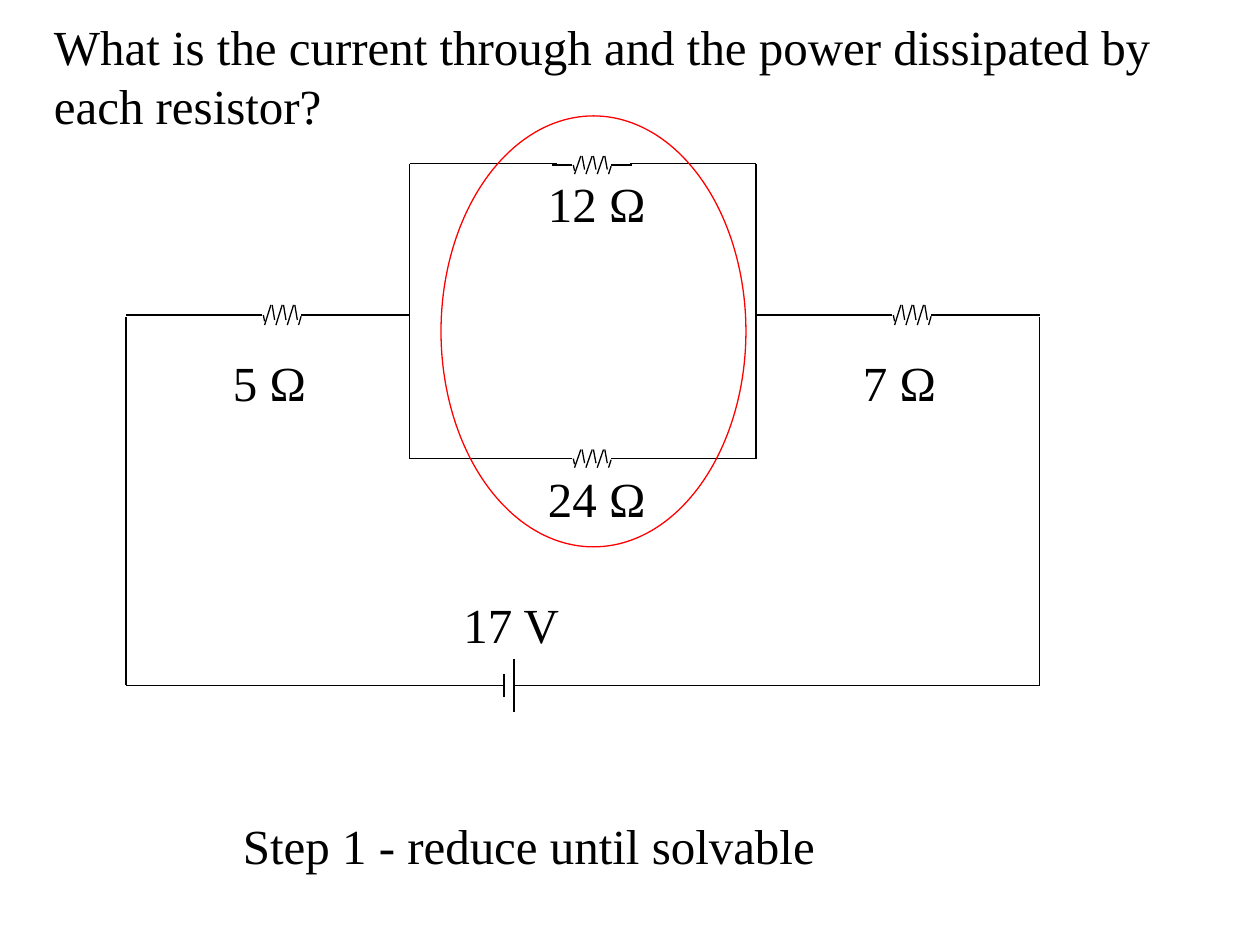
"""Build a slide that shows a resistor circuit with its first solving step."""
from lxml import etree
from pptx import Presentation
from pptx.dml.color import RGBColor
from pptx.enum.shapes import MSO_CONNECTOR, MSO_SHAPE
from pptx.enum.text import MSO_AUTO_SIZE
from pptx.oxml.ns import qn
from pptx.util import Inches, Pt

BLACK = RGBColor(0, 0, 0)
RED = RGBColor(255, 0, 0)
LINE = MSO_CONNECTOR.STRAIGHT
OVAL = MSO_SHAPE.OVAL
FIT = MSO_AUTO_SIZE.SHAPE_TO_FIT_TEXT
CELL = Inches(1)
COLS, ROWS = 10, 7.5
FONT = {"name": "Times New Roman", "size": Pt(28)}

LEFT, SPLIT, JOIN, RIGHT = 1, 3.25, 6, 8.25
TOP, MID, LOW, BASE = 1.3, 2.5, 3.64, 5.44
SIDE = MID + 0.02
MINUS, PLUS = 4, 4.08

WIRES = [
    (SPLIT, TOP, SPLIT, LOW), (JOIN, TOP, JOIN, LOW),
    (LEFT, MID, 2, MID), (2.5, MID, SPLIT, MID),
    (JOIN, MID, 7, MID), (7.5, MID, RIGHT, MID),
    (LEFT, SIDE, LEFT, BASE), (RIGHT, SIDE, RIGHT, BASE),
    (LEFT, BASE, MINUS, BASE), (PLUS, BASE, RIGHT, BASE),
]
WIRES += [w for y in (TOP, LOW)
          for w in ((SPLIT, y, 4.42, y), (5, y, JOIN, y))]
CELLS = [(MINUS, 0.09), (PLUS, 0.21)]

ENDS = [(0, 0, 0.16, 0), (0.47, 0, 0.64, 0),
        (0.18, 0.05, 0.17, 0), (0.47, 0.01, 0.45, 0.08)]
PEAKS = [(0.44, 0.04, 0.42, -0.08), (0.41, -0.08, 0.36, 0.08)]
PITCH = 0.09
COILS = [(1.92, MID, 1), (6.92, MID, 1),
         (4.38, TOP + 0.01, 0.9), (4.38, LOW, 0.9)]

TEXTS = [
    ("What is the current through and the power dissipated by each resistor?",
     (0.33, 0.08, 9.33, 1.03), True),
    ("5 Ω", (1.75, 2.75, 0.79, 0.57), False),
    ("7 Ω", (6.75, 2.75, 0.79, 0.57), False),
    ("12 Ω", (4.25, 1.33, 0.99, 0.57), False),
    ("24 Ω", (4.25, 3.67, 0.99, 0.57), False),
    ("17 V", (3.58, 4.67, 0.97, 0.57), False),
    ("Step 1 - reduce until solvable", (1.83, 6.42, 4.74, 0.57), False),
]


def grid(vals):
    """Turn grid columns and rows into slide lengths."""
    return [round(v * CELL) for v in vals]


def draw_wire(shapes, ends):
    """Draw one thin black wire."""
    wire = shapes.add_connector(LINE, *grid(ends))
    wire.line.color.rgb = BLACK
    wire.line.width = Pt(0.75)
    etree.SubElement(wire._element.spPr, qn("a:effectLst"))


def draw_coil(slide, left, mid, scale):
    """Draw a resistor as a group of strokes."""
    group = slide.shapes.add_group_shape()
    zigzag = [(a - PITCH * i, b, c - PITCH * i, d)
              for i in range(3) for a, b, c, d in PEAKS]
    for a, b, c, d in zigzag + ENDS:
        draw_wire(group.shapes,
                  (left + a, mid + b * scale, left + c, mid + d * scale))


def add_text(slide, words, area, wrap):
    """Add a text box in the slide's type style."""
    frame = slide.shapes.add_textbox(*grid(area)).text_frame
    frame.word_wrap = wrap
    frame.auto_size = FIT
    run = frame.paragraphs[0].add_run()
    run.text = words
    for key, val in FONT.items():
        setattr(run.font, key, val)
    run.font.color.rgb = BLACK


def add_ring(slide, area):
    """Ring the parallel part in red."""
    ring = slide.shapes.add_shape(OVAL, *grid(area))
    ring.shadow.inherit = False
    ring.fill.background()
    ring.line.color.rgb = RED
    ring.line.width = Pt(0.75)


def main():
    """Build and save the slide."""
    deck = Presentation()
    deck.slide_width, deck.slide_height = grid((COLS, ROWS))
    slide = deck.slides.add_slide(deck.slide_layouts[6])
    for ends in WIRES:
        draw_wire(slide.shapes, ends)
    for x, half in CELLS:
        draw_wire(slide.shapes, (x, BASE - half, x, BASE + half))
    for coil in COILS:
        draw_coil(slide, *coil)
    for item in TEXTS:
        add_text(slide, *item)
    add_ring(slide, (3.5, 0.92, 2.42, 3.42))
    deck.save("out.pptx")


if __name__ == "__main__":
    main()
